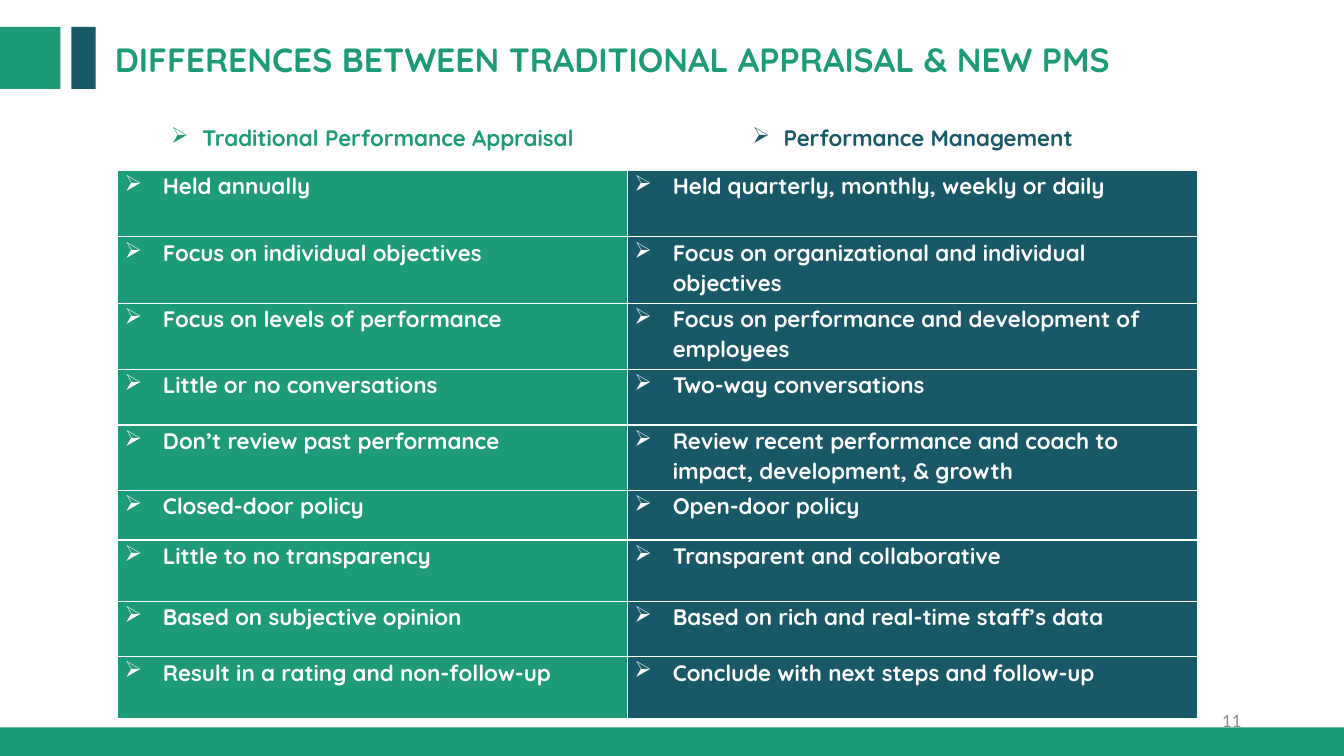
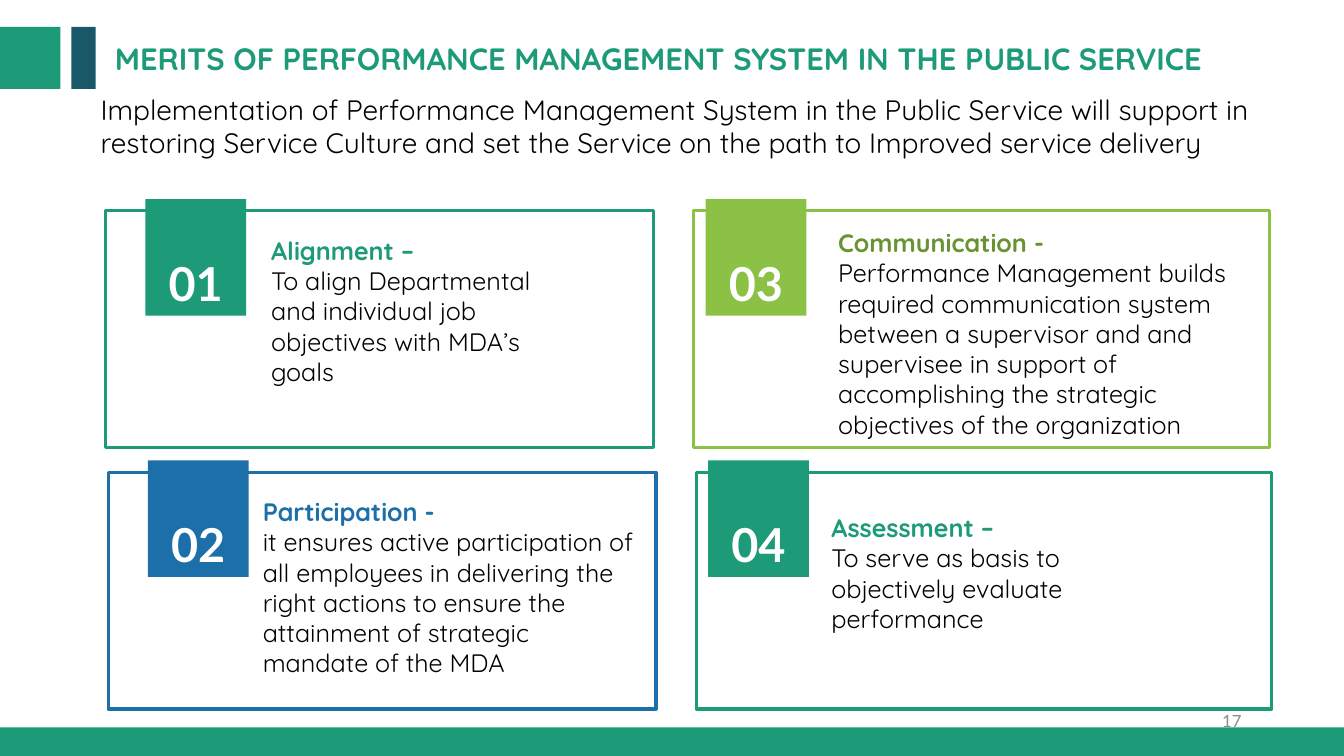
from dataclasses import dataclass

from lxml.etree import SubElement
from pptx import Presentation
from pptx.dml.color import RGBColor
from pptx.enum.shapes import MSO_SHAPE as Preset
from pptx.enum.text import MSO_ANCHOR as Anchor, PP_ALIGN as Align
from pptx.oxml.ns import qn
from pptx.util import Inches, Pt

COLUMNS, ROWS = 16, 9
UNIT = 7.5 / ROWS
GREEN, TEAL, LIME, BLUE = "1D9A78", "195869", "8BC145", "1D6FA9"
OLIVE, GREY, BLACK, WHITE = "699331", "8C8C8C", "000000", "FFFFFF"
HEADING, NUMERAL = "Quicksand", "Lato"

HEADERS = ("Traditional Performance Appraisal", "Performance Management")
DIFFERENCES = [
    (0.79, "Held annually", "Held quarterly, monthly, weekly or daily"),
    (0.79, "Focus on individual objectives",
     "Focus on organizational and individual objectives"),
    (0.79, "Focus on levels of performance",
     "Focus on performance and development of employees"),
    (0.66, "Little or no conversations", "Two-way conversations"),
    (0.78, "Don’t review past performance",
     "Review recent performance and coach to impact, development, & growth"),
    (0.59, "Closed-door policy", "Open-door policy"),
    (0.73, "Little to no transparency", "Transparent and collaborative"),
    (0.66, "Based on subjective opinion",
     "Based on rich and real-time staff’s data"),
    (0.73, "Result in a rating and non-follow-up",
     "Conclude with next steps and follow-up"),
]


@dataclass
class Box:
    left: float
    top: float
    width: float
    height: float

    def within(self, left, top, width, height):
        return Box(self.left + left, self.top + top, width, height)

    def place(self):
        return [grid(n) for n in (self.left, self.top, self.width, self.height)]


@dataclass
class Merit:
    number: str
    heading: str
    body: str
    color: str
    heading_color: str
    text_area: tuple


MERITS = [
    [Merit("01", "Alignment –",
           "To align Departmental and individual job objectives with MDA’s goals",
           GREEN, GREEN, (1.85, 0.23, 3.82, 1.94)),
     Merit("03", "Communication -",
           "Performance Management builds required communication system between "
           "a supervisor and and supervisee in support of accomplishing the "
           "strategic objectives of the organization",
           LIME, OLIVE, (1.6, 0.14, 5, 2.66))],
    [Merit("02", "Participation -",
           "it ensures active participation of all employees in delivering the "
           "right actions to ensure the attainment of strategic mandate of the MDA",
           BLUE, BLUE, (1.72, 0.23, 4.67, 2.3)),
     Merit("04", "Assessment –",
           "To serve as basis to objectively evaluate performance",
           GREEN, GREEN, (1.49, 0.42, 3.4, 1.57))],
]


def grid(units):
    return Inches(units * UNIT)


def paint(target, color):
    target.solid()
    target.fore_color.rgb = RGBColor.from_string(color)


def style(para, size, color, bold=False, name=HEADING, align=Align.LEFT):
    para.alignment = align
    font = para.font
    font.size, font.name, font.bold = Pt(size), name, bold
    font.color.rgb = RGBColor.from_string(color)


def add_text(page, box, text, anchor=Anchor.TOP, insets=(0.1, 0.05), **look):
    frame = page.shapes.add_textbox(*box.place()).text_frame
    frame.word_wrap = True
    frame.vertical_anchor = anchor
    frame.margin_left = frame.margin_right = Inches(insets[0])
    frame.margin_top = frame.margin_bottom = Inches(insets[1])
    para = frame.paragraphs[0]
    para.text = text
    style(para, **look)
    return frame


def add_block(page, box, fill=None, line=None):
    block = page.shapes.add_shape(Preset.RECTANGLE, *box.place())
    block.shadow.inherit = False
    if fill:
        paint(block.fill, fill)
    else:
        block.fill.background()
    if line:
        paint(block.line.fill, line)
        block.line.width = Pt(2.25)
    else:
        block.line.fill.background()
    return block


def add_frame(deck, title, title_size, number):
    page = deck.slides.add_slide(deck.slide_layouts[6])
    add_text(page, Box(11.3, 8.34, 3.6, 0.48), number, Anchor.MIDDLE,
             size=12, color=GREY, name=NUMERAL, align=Align.RIGHT)
    add_block(page, Box(0, 0.32, 0.72, 0.74), GREEN)
    add_block(page, Box(0.85, 0.32, 0.29, 0.74), TEAL)
    add_block(page, Box(0, 8.66, COLUMNS, ROWS - 8.66), GREEN)
    add_text(page, Box(1.26, 0.42, 14.2, 0.58), title, insets=(0.09, 0.04),
             size=title_size, color=GREEN, bold=True)
    return page


def add_bullet(para, indent, tab=None):
    props = para._p.get_or_add_pPr()
    props.set("marL", str(Inches(indent)))
    props.set("indent", str(-Inches(indent)))
    SubElement(props, qn("a:buChar"), char="➢")
    if tab:
        tabs = SubElement(props, qn("a:tabLst"))
        SubElement(tabs, qn("a:tab"), pos=str(Inches(tab)), algn="l")


def add_borders(cell, color):
    props = cell._tc.get_or_add_tcPr()
    for side in ("lnL", "lnR", "lnT", "lnB"):
        line = SubElement(props, qn(f"a:{side}"), w=str(Pt(1)))
        SubElement(SubElement(line, qn("a:solidFill")), qn("a:srgbClr"), val=color)


def fill_cell(cell, text, fill, color, header):
    add_borders(cell, WHITE)
    paint(cell.fill, fill)
    cell.margin_left = cell.margin_right = Inches(0.07)
    cell.margin_top = cell.margin_bottom = 0
    cell.vertical_anchor = Anchor.MIDDLE if header else Anchor.TOP
    para = cell.text_frame.paragraphs[0]
    para.text = text
    if header:
        add_bullet(para, 0.31)
    else:
        add_bullet(para, 0.38, 0.5)
    para.line_spacing, para.space_after = 1.07, Pt(8)
    style(para, 16, color, True, align=Align.CENTER if header else Align.LEFT)


def add_comparison(page, box):
    rows = [(0.79, *HEADERS), *DIFFERENCES]
    table = page.shapes.add_table(len(rows), 2, *box.place()).table
    table.first_row = table.horz_banding = False
    left_width = 6.07
    for column, width in zip(table.columns, (left_width, box.width - left_width)):
        column.width = grid(width)
    for index, (height, *texts) in enumerate(rows):
        table.rows[index].height = grid(height)
        header = index == 0
        for column, (text, tone) in enumerate(zip(texts, (GREEN, TEAL))):
            fill, color = (WHITE, tone) if header else (tone, WHITE)
            fill_cell(table.cell(index, column), text, fill, color, header)


def add_card(page, box, merit, badge_left):
    add_block(page, box, line=merit.color)
    badge = add_block(page, box.within(badge_left, -0.14, 1.2, 1.39), merit.color)
    badge.text_frame.vertical_anchor = Anchor.BOTTOM
    para = badge.text_frame.paragraphs[0]
    para.text = merit.number
    style(para, 33.4, WHITE, True, NUMERAL, Align.CENTER)
    frame = add_text(page, box.within(*merit.text_area), merit.heading,
                     size=18, color=merit.heading_color, bold=True)
    body = frame.add_paragraph()
    body.text = merit.body
    style(body, 18, BLACK)


def add_cards(page, box):
    columns = ((0, 6.52, 0.47), (7, 6.85, 0.14))
    row_step, row_shift, height = 3.11, 0.03, 2.82
    for row, merits in enumerate(MERITS):
        for merit, (left, width, badge_left) in zip(merits, columns):
            card = box.within(left + row * row_shift, row * row_step, width, height)
            add_card(page, card, merit, badge_left)


def build_differences(deck):
    page = add_frame(
        deck, "DIFFERENCES BETWEEN TRADITIONAL APPRAISAL & NEW PMS", 24, "11")
    add_comparison(page, Box(1.4, 1.24, 12.86, 7.31))


def build_merits(deck):
    page = add_frame(
        deck, "MERITS OF PERFORMANCE MANAGEMENT SYSTEM IN THE PUBLIC SERVICE",
        22, "17")
    add_text(page, Box(1.08, 1.04, 13.91, 0.92),
             "Implementation of Performance Management System in the Public "
             "Service will support in restoring Service Culture and set the "
             "Service on the path to Improved service delivery",
             size=20, color=BLACK, align=Align.JUSTIFY)
    add_cards(page, Box(1.26, 2.51, 13.88, 5.93))


def main():
    deck = Presentation()
    deck.slide_width, deck.slide_height = grid(COLUMNS), grid(ROWS)
    build_differences(deck)
    build_merits(deck)
    deck.save("out.pptx")


if __name__ == "__main__":
    main()
